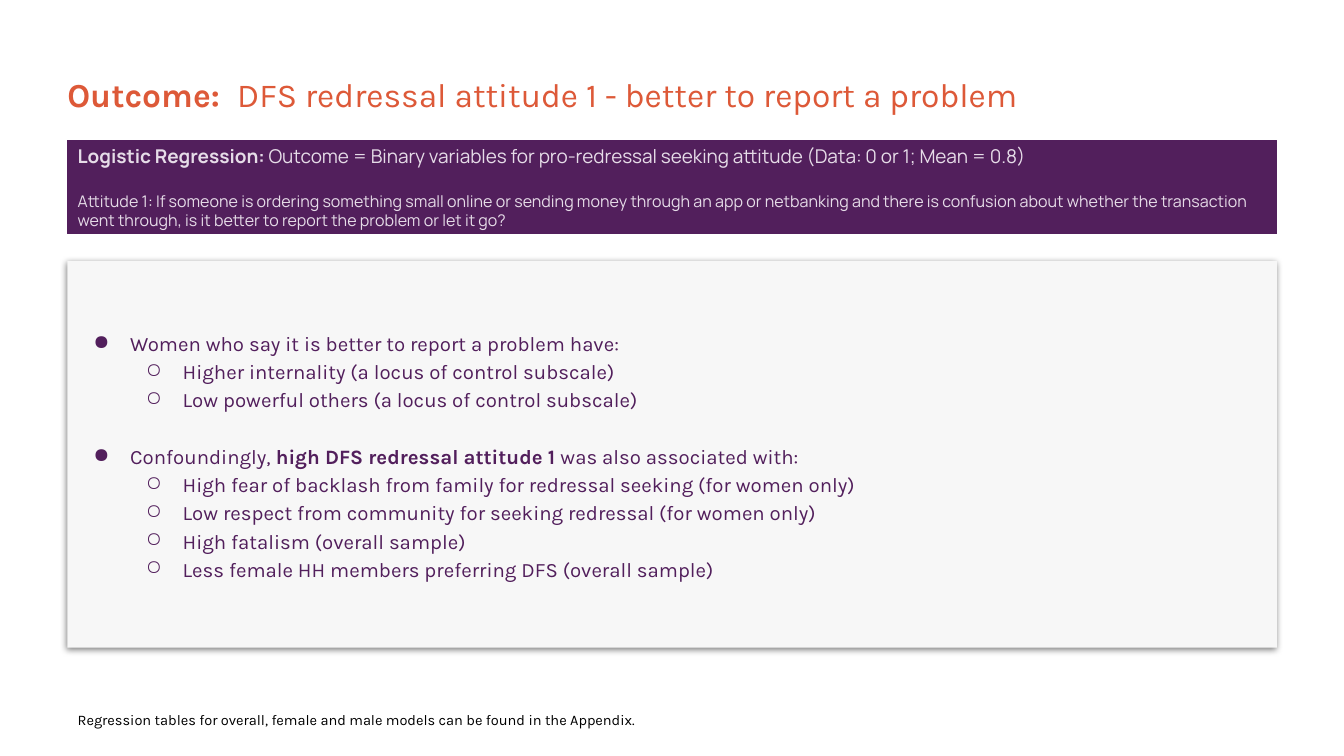
from lxml.etree import SubElement
from pptx import Presentation
from pptx.dml.color import RGBColor
from pptx.enum.shapes import MSO_SHAPE
from pptx.enum.text import MSO_ANCHOR, PP_ALIGN
from pptx.oxml.ns import qn
from pptx.util import Cm, Pt

COLORS = {
    "purple": "521F5C",
    "lilac": "E6DCE8",
    "orange": "DD5938",
    "panel": "F7F7F7",
    "white": "FFFFFF",
    "black": "000000",
}
LEFT, WIDTH = 1.63, 29.26
INSET = 0.25
INDENT, HANGING = 1.27, 0.89
BULLETS = "●○"

FINDINGS = [
    (
        [("Women who say it is better to report a problem have:", False)],
        [
            "Higher internality (a locus of control subscale)",
            "Low powerful others (a locus of control subscale)",
        ],
    ),
    (
        [
            ("Confoundingly, ", False),
            ("high DFS redressal attitude 1", True),
            (" was also associated with:", False),
        ],
        [
            "High fear of backlash from family for redressal seeking (for women only)",
            "Low respect from community for seeking redressal (for women only)",
            "High fatalism (overall sample)",
            "Less female HH members preferring DFS (overall sample)",
        ],
    ),
]


def rgb(name):
    return RGBColor.from_string(COLORS[name])


def add_run(paragraph, text, font, size, color, bold=False):
    run = paragraph.add_run()
    run.text = text
    run.font.name = font
    run.font.size = Pt(size)
    run.font.bold = bold
    run.font.color.rgb = rgb(color)


def prepare_text(shape, inset=INSET, anchor=MSO_ANCHOR.MIDDLE):
    frame = shape.text_frame
    frame.word_wrap = True
    frame.vertical_anchor = anchor
    frame.margin_left = frame.margin_right = Cm(inset)
    frame.margin_top = frame.margin_bottom = Cm(inset)
    return frame


def add_rectangle(slide, box, fill):
    shape = slide.shapes.add_shape(MSO_SHAPE.RECTANGLE, *map(Cm, box))
    shape.shadow.inherit = False
    shape.fill.solid()
    shape.fill.fore_color.rgb = rgb(fill)
    shape.line.fill.background()
    return shape


def add_soft_shadow(shape):
    """Give the shape a blurred shadow that falls straight down."""
    effects = shape.element.spPr.find(qn("a:effectLst"))
    shadow = SubElement(effects, qn("a:outerShdw"), blurRad=str(Pt(4.5)),
                        dist=str(Pt(1.5)), dir="5400000", algn="bl", rotWithShape="0")
    color = SubElement(shadow, qn("a:srgbClr"), val=COLORS["black"])
    SubElement(color, qn("a:alpha"), val="50000")


def set_bullet(paragraph, level):
    paragraph.level = level
    properties = paragraph._p.get_or_add_pPr()
    properties.set("marL", str(Cm(INDENT * (level + 1))))
    properties.set("indent", str(-Cm(HANGING)))
    color = SubElement(properties, qn("a:buClr"))
    SubElement(color, qn("a:srgbClr"), val=COLORS["purple"])
    SubElement(properties, qn("a:buChar"), char=BULLETS[level])


def add_title(slide, box):
    frame = prepare_text(slide.shapes.add_textbox(*map(Cm, box)), inset=0)
    paragraph = frame.paragraphs[0]
    add_run(paragraph, "Outcome:  ", "Karla", 23, "orange", bold=True)
    add_run(paragraph, "DFS redressal attitude 1 - better to report a problem",
            "Karla", 23, "orange")


def add_model_banner(slide, box):
    banner = add_rectangle(slide, box, "purple")
    banner.line.color.rgb = rgb("purple")
    banner.line.width = Pt(0.75)
    frame = prepare_text(banner)
    model = frame.paragraphs[0]
    add_run(model, "Logistic Regression:", "Manrope", 13, "lilac", bold=True)
    add_run(model, " Outcome = Binary variables for pro-redressal seeking attitude "
            "(Data: 0 or 1; Mean = 0.8)", "Manrope", 13, "lilac")
    attitude = frame.add_paragraph()
    attitude.space_before = Pt(16)
    add_run(attitude, "Attitude 1", "Manrope", 11, "lilac")
    add_run(attitude, ": ", "Manrope", 11, "white")
    add_run(attitude, "If someone is ordering something small online or sending money "
            "through an app or netbanking and there is confusion about whether the "
            "transaction went through, is it better to report the problem or let it go?",
            "Manrope", 11, "lilac")
    for paragraph in frame.paragraphs:
        paragraph.alignment = PP_ALIGN.LEFT


def add_findings_panel(slide, box):
    panel = add_rectangle(slide, box, "panel")
    add_soft_shadow(panel)
    frame = prepare_text(panel)
    for group, (heading, details) in enumerate(FINDINGS):
        rows = [(0, heading)] + [(1, [(detail, False)]) for detail in details]
        for level, runs in rows:
            first = group == 0 and level == 0
            paragraph = frame.paragraphs[0] if first else frame.add_paragraph()
            paragraph.alignment = PP_ALIGN.LEFT
            paragraph.line_spacing = 1.15
            if level == 0 and not first:
                paragraph.space_before = Pt(19.5)
            set_bullet(paragraph, level)
            for text, bold in runs:
                add_run(paragraph, text, "Karla", 14, "purple", bold)


def add_footnote(slide, box):
    frame = prepare_text(slide.shapes.add_textbox(*map(Cm, box)), anchor=MSO_ANCHOR.TOP)
    add_run(frame.paragraphs[0], "Regression tables for overall, female and male models "
            "can be found in the Appendix.", "Karla", 10, "black")


def main():
    presentation = Presentation()
    presentation.slide_width = Cm(32.51)
    presentation.slide_height = Cm(18.29)
    slide = presentation.slides.add_slide(presentation.slide_layouts[6])
    add_model_banner(slide, (LEFT, 3.4, WIDTH, 2.26))
    add_title(slide, (LEFT, 0.74, WIDTH, 3.05))
    add_findings_panel(slide, (LEFT, 6.32, WIDTH, 9.35))
    add_footnote(slide, (LEFT, 16.99, 15.62, 0.94))
    presentation.save("out.pptx")


if __name__ == "__main__":
    main()
